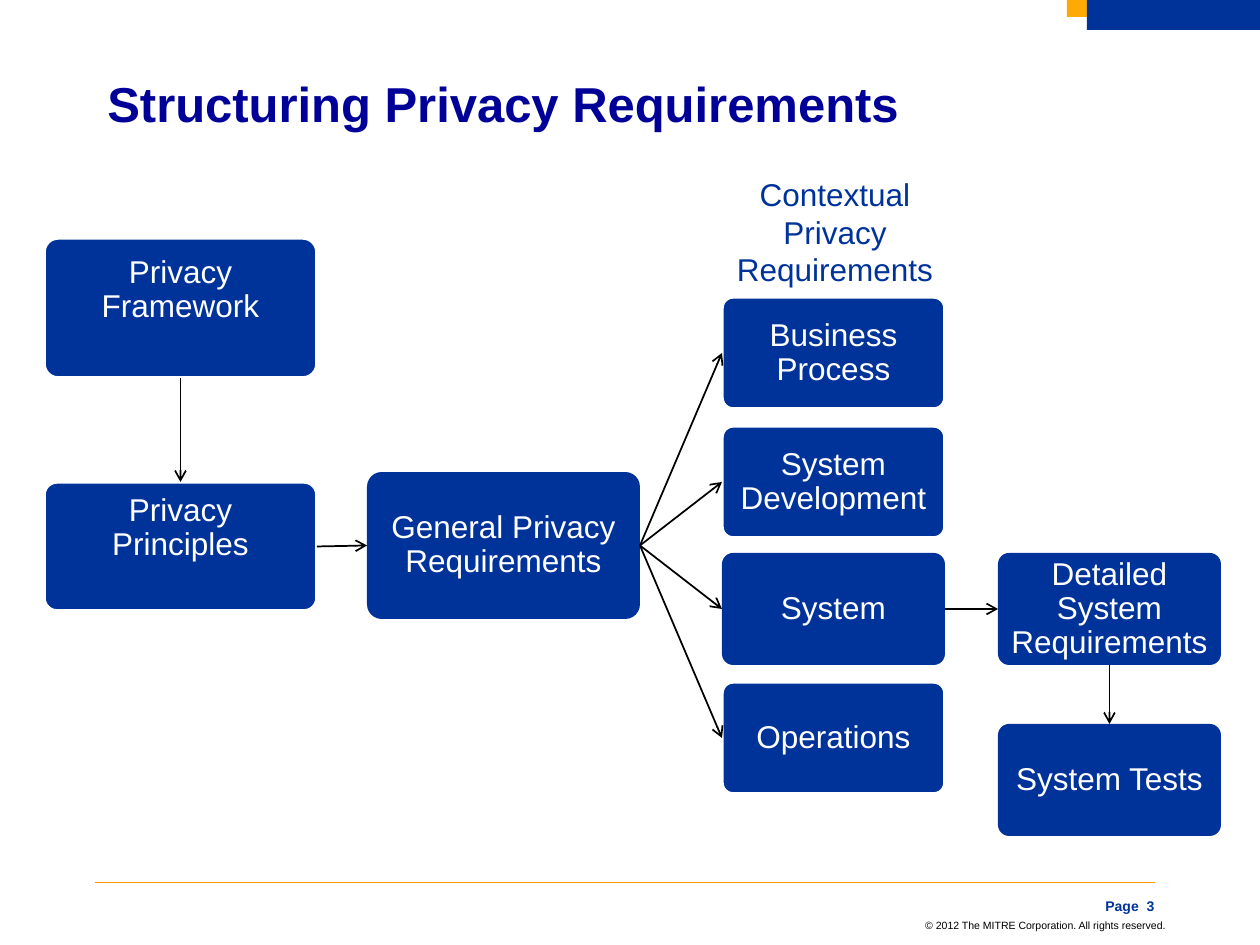
from pptx import Presentation, util as u
from pptx.dml.color import RGBColor
from pptx.enum import shapes, text
from lxml import etree

PX = 914400 // 126
NS = "{http://schemas.openxmlformats.org/drawingml/2006/main}"
HUE = {"navy": "003399", "title": "000099", "gold": "FDAA03",
       "rule": "FF9900", "white": "FFFFFF", "black": "000000"}
LEFT, MID, RIGHT = text.PP_ALIGN.LEFT, text.PP_ALIGN.CENTER, text.PP_ALIGN.RIGHT
TOP, LEFTSIDE, BASE, RIGHTSIDE = range(4)

BARS = [((1067, 0, 193, 17), "gold"), ((1087, 0, 173, 30), "navy")]
LABELS = [
    ("© 2012 The MITRE Corporation. All rights reserved.", (880, 913, 298, 25), 6, "black", False, RIGHT),
    ("Structuring Privacy Requirements", (95, 38, 1060, 130), 28, "title", True, LEFT),
    ("Contextual Privacy Requirements", (714, 168, 242, 127), 18, "navy", False, MID),
    ("Page  3", (1000, 890, 167, 32), 8, "navy", True, RIGHT),
]
WIDE, SLIM, LIFT = 273, 223, 36
BOXES = [
    ("Privacy Principles", 44, 482, WIDE, 129, True, LIFT),
    ("Business Process", 722, 297, SLIM, 112, True, 0),
    ("System Development", 722, 426, SLIM, 112, True, 0),
    ("System", 722, 553, SLIM, 112, False, 0),
    ("Operations", 722, 682, SLIM, 112, True, 0),
    ("Privacy Framework", 44, 238, WIDE, 140, True, LIFT),
    ("General Privacy Requirements", 367, 472, WIDE, 147, False, 0),
    ("Detailed System Requirements", 998, 553, SLIM, 112, False, 0),
    ("System Tests", 998, 724, SLIM, 112, False, 0),
]
GENERAL = "General Privacy Requirements"
LINKS = [("Privacy Framework", BASE, "Privacy Principles", TOP)]
LINKS += [(GENERAL, RIGHTSIDE, name, LEFTSIDE)
          for name in ("Business Process", "System Development", "System", "Operations")]
LINKS += [
    ("Privacy Principles", RIGHTSIDE, GENERAL, LEFTSIDE),
    ("System", RIGHTSIDE, "Detailed System Requirements", LEFTSIDE),
    ("Detailed System Requirements", BASE, "System Tests", TOP),
]

deck = Presentation()
deck.slide_width, deck.slide_height = u.Inches(10), u.Inches(7.5)
slide = deck.slides.add_slide(deck.slide_layouts[6])


def scale(area):
    return [n * PX for n in area]


def rgb(hue):
    return RGBColor.from_string(HUE[hue])


def write(frame, words, size, hue, bold, align):
    frame.text = words
    frame.word_wrap = True
    frame.vertical_anchor = text.MSO_ANCHOR.MIDDLE
    para = frame.paragraphs[0]
    para.alignment = align
    font = para.runs[0].font
    font.name, font.size, font.bold = "Arial", u.Pt(size), bold
    font.color.rgb = rgb(hue)
    return para


def block(kind, area, hue):
    shape = slide.shapes.add_shape(kind, *scale(area))
    shape.shadow.inherit = False
    shape.fill.solid()
    shape.fill.fore_color.rgb = rgb(hue)
    shape.line.fill.background()
    return shape


def wire(ends, hue, width):
    line = slide.shapes.add_connector(shapes.MSO_CONNECTOR.STRAIGHT, *scale(ends))
    line.line.color.rgb = rgb(hue)
    line.line.width = u.Pt(width)
    etree.SubElement(line._element.spPr, NS + "effectLst")
    return line


def node(words, x, y, w, h, edge, lift):
    shape = block(shapes.MSO_SHAPE.ROUNDED_RECTANGLE, (x, y, w, h), "navy")
    shape.adjustments[0] = 0.1
    if edge:
        shape.line.color.rgb = rgb("white")
        shape.line.width = u.Pt(2)
    frame = shape.text_frame
    frame.margin_left = frame.margin_right = (16 if w == WIDE else 1) * PX
    frame.margin_top, frame.margin_bottom = PX, (1 + lift) * PX
    write(frame, words, 18, "white", False, MID).line_spacing = 0.9
    return shape


wire((95, 882, 1155, 882), "rule", 0.5)
for area, hue in BARS:
    block(shapes.MSO_SHAPE.RECTANGLE, area, hue)

for words, area, *style in LABELS:
    write(slide.shapes.add_textbox(*scale(area)).text_frame, words, *style)

nodes = {box[0]: node(*box) for box in BOXES}

for start, out, end, into in LINKS:
    line = wire((0, 0, 0, 0), "black", 1)
    line.begin_connect(nodes[start], out)
    line.end_connect(nodes[end], into)
    etree.SubElement(line.line._get_or_add_ln(), NS + "tailEnd", type="arrow")

deck.save("out.pptx")
